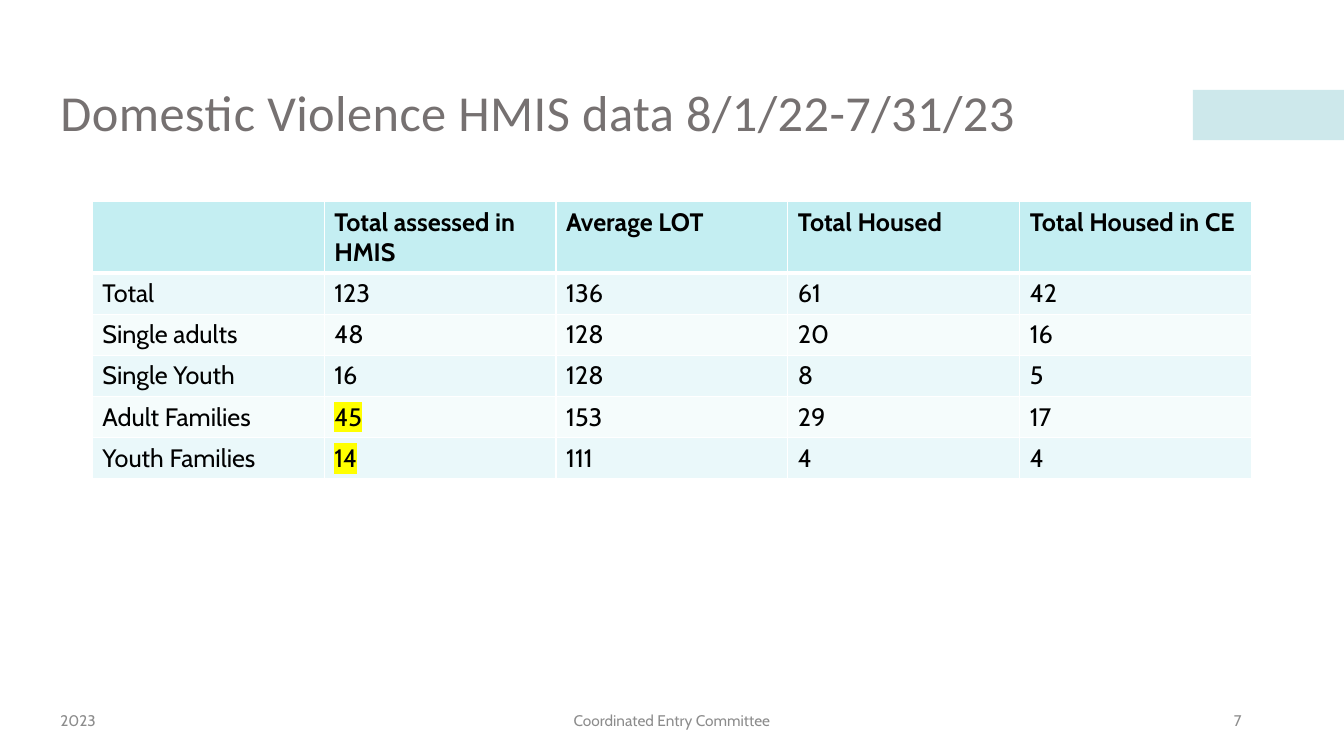
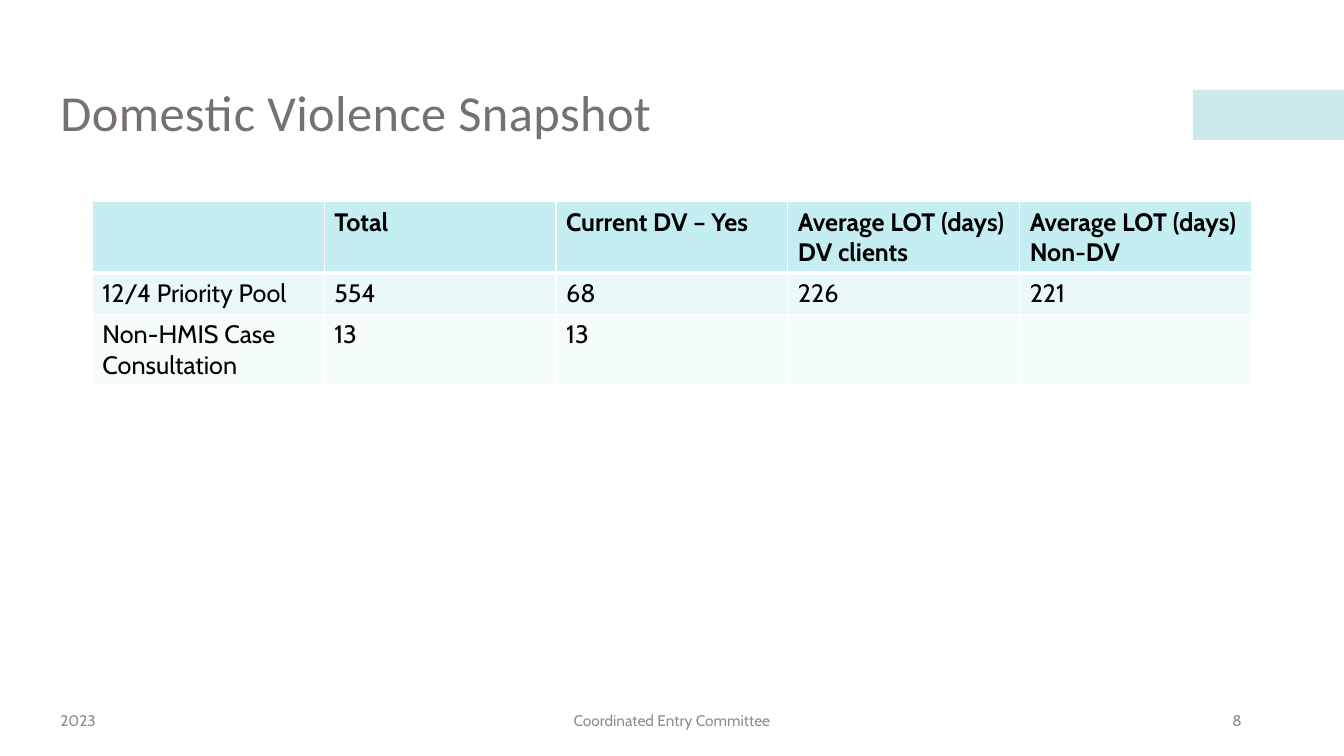
"""Build two domestic violence data slides that share a title, band, table and footer style."""
from dataclasses import dataclass

from lxml import etree
from pptx import Presentation
from pptx import util as u
from pptx.dml import color
from pptx.enum import shapes, text
from pptx.oxml import ns


@dataclass(frozen=True)
class Theme:
    head: str = "Calibri"
    body: str = "Cabin"
    title: str = "767171"
    ink: str = "000000"
    foot: str = "8C8C8C"
    band: str = "9CD3D9"
    rule: str = "FFFFFF"
    top: str = "C4EEF2"
    odd: str = "EAF8FA"
    even: str = "F5FCFC"
    mark: str = "FFFF00"
    big: int = 36
    mid: int = 18
    small: int = 11


look = Theme()
deck = Presentation()
deck.slide_width, deck.slide_height = u.Inches(13.33), u.Inches(7.5)
COLS, ROWS = 160, 90


def area(x, y, w, h):
    """Turn grid columns and rows into slide lengths."""
    col, row = deck.slide_width / COLS, deck.slide_height / ROWS
    return int(x * col), int(y * row), int(w * col), int(h * row)


def write(para, words, size, tint, face=look.body, bold=False):
    """Add one styled run to a paragraph."""
    run = para.add_run()
    run.text = words
    run.font.size, run.font.name, run.font.bold = u.Pt(size), face, bold
    run.font.color.rgb = color.RGBColor.from_string(tint)
    return run


pages = [
    ("Domestic Violence HMIS data 8/1/22-7/31/23", "7", {(4, 1), (5, 1)}, [
        ["", "Total assessed in HMIS", "Average LOT", "Total Housed", "Total Housed in CE"],
        ["Total", "123", "136", "61", "42"],
        ["Single adults", "48", "128", "20", "16"],
        ["Single Youth", "16", "128", "8", "5"],
        ["Adult Families", "45", "153", "29", "17"],
        ["Youth Families", "14", "111", "4", "4"],
    ]),
    ("Domestic Violence Snapshot", "8", set(), [
        ["", "Total", "Current DV – Yes", "Average LOT (days) DV clients",
         "Average LOT (days)\nNon-DV"],
        ["12/4 Priority Pool", "554", "68", "226", "221"],
        ["Non-HMIS Case Consultation", "13", "13", "", ""],
    ]),
]

for name, num, marks, data in pages:
    slide = deck.slides.add_slide(deck.slide_layouts[5])
    title = slide.shapes.title
    title.left, title.top, title.width, title.height = area(6, 5, 148, 17.4)
    frame = title.text_frame
    frame.auto_size = text.MSO_AUTO_SIZE.NONE
    frame.vertical_anchor = text.MSO_ANCHOR.MIDDLE
    para = frame.paragraphs[0]
    para.alignment, para.line_spacing = text.PP_ALIGN.LEFT, 0.9
    run = write(para, name, look.big, look.title, look.head)
    run.font._element.set("spc", "30")

    band = slide.shapes.add_shape(shapes.MSO_SHAPE.RECTANGLE, *area(142, 10.7, 18, 6))
    band.shadow.inherit = False
    band.line.fill.background()
    band.fill.solid()
    band.fill.fore_color.rgb = color.RGBColor.from_string(look.band)
    tint = band.element.spPr.find(ns.qn("a:solidFill"))[0]
    etree.SubElement(tint, ns.qn("a:alpha"), val="50000")
    title.element.addprevious(band.element)

    grid = slide.shapes.add_table(len(data), len(data[0]),
                                  *area(11, 24, 138, 4.9 * len(data))).table
    for r, line in enumerate(data):
        for c, words in enumerate(line):
            cell = grid.cell(r, c)
            props = cell._tc.get_or_add_tcPr()
            for side in "LRTB":
                thick = (r, side) in {(0, "B"), (1, "T")}
                edge = etree.SubElement(props, ns.qn("a:ln" + side),
                                        w=str(u.Pt(3 if thick else 1)))
                paint = etree.SubElement(edge, ns.qn("a:solidFill"))
                etree.SubElement(paint, ns.qn("a:srgbClr"), val=look.rule)
            cell.fill.solid()
            shade = look.top if r == 0 else look.odd if r % 2 else look.even
            cell.fill.fore_color.rgb = color.RGBColor.from_string(shade)
            if not words:
                continue
            frame = cell.text_frame
            for i, part in enumerate(words.split("\n")):
                para = frame.add_paragraph() if i else frame.paragraphs[0]
                run = write(para, part, look.mid, look.ink, bold=r == 0)
                if (r, c) in marks:
                    glow = etree.Element(ns.qn("a:highlight"))
                    etree.SubElement(glow, ns.qn("a:srgbClr"), val=look.mark)
                    run.font._element.find(ns.qn("a:solidFill")).addnext(glow)

    for words, x, w, side in [
        ("2023", 6, 36, text.PP_ALIGN.LEFT),
        ("Coordinated Entry Committee", 53, 54, text.PP_ALIGN.CENTER),
        (num, 113, 36, text.PP_ALIGN.RIGHT),
    ]:
        frame = slide.shapes.add_textbox(*area(x, 83.4, w, 4.8)).text_frame
        frame.word_wrap = True
        frame.vertical_anchor = text.MSO_ANCHOR.MIDDLE
        frame.paragraphs[0].alignment = side
        write(frame.paragraphs[0], words, look.small, look.foot)

deck.save("out.pptx")
